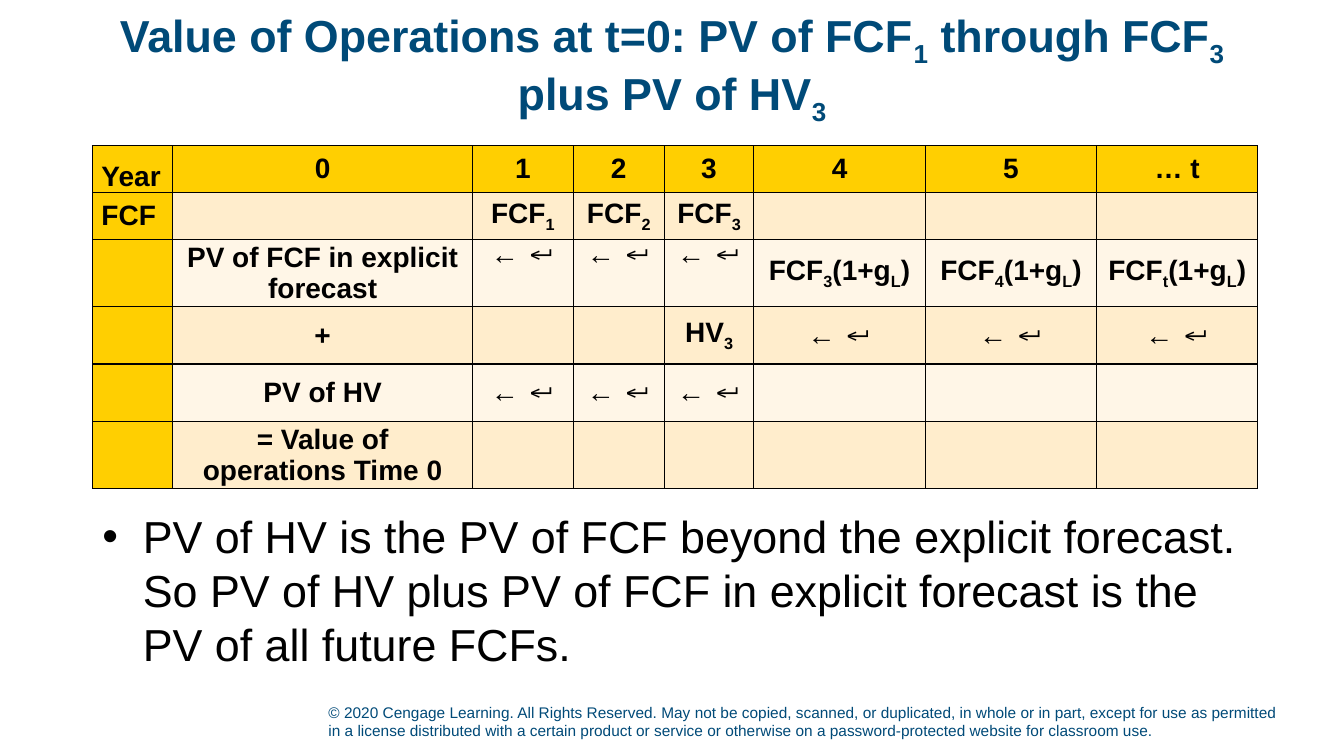
from dataclasses import dataclass

from lxml.etree import SubElement
from pptx import Presentation
from pptx.dml.color import RGBColor
from pptx.enum.text import MSO_ANCHOR, PP_ALIGN
from pptx.oxml.ns import qn
from pptx.util import Pt


@dataclass(frozen=True)
class Theme:
    font: str = "Arial"
    navy: str = "004A78"
    black: str = "000000"
    gold: str = "FFCF01"
    cream: str = "FFEDCC"
    ivory: str = "FFF6E7"
    heading_size: int = 32
    cell_size: int = 20
    legal_size: int = 11


class SlideBuilder:
    def __init__(self, slide, theme):
        self.slide = slide
        self.theme = theme

    def add_runs(self, paragraph, text, size, color, bold=False):
        """Add runs; the character after each underscore is a subscript."""
        first, *rest = text.split("_")
        pieces = [(first, False)]
        for part in rest:
            pieces += [(part[0], True), (part[1:], False)]
        for piece, lowered in pieces:
            if not piece:
                continue
            run = paragraph.add_run()
            run.text = piece
            run.font.name = self.theme.font
            run.font.size = Pt(size)
            run.font.bold = bold
            run.font.color.rgb = RGBColor.from_string(color)
            if lowered:
                run.font._element.set("baseline", "-25000")

    def text(self, box, text, size, color, bold=False, anchor=MSO_ANCHOR.TOP,
             align=PP_ALIGN.LEFT, line_spacing=None, hanging=0):
        frame = self.slide.shapes.add_textbox(*map(Pt, box)).text_frame
        frame.word_wrap = True
        frame.vertical_anchor = anchor
        paragraph = frame.paragraphs[0]
        paragraph.alignment = align
        if line_spacing:
            paragraph.line_spacing = line_spacing
        if hanging:
            properties = paragraph._p.get_or_add_pPr()
            properties.set("marL", str(Pt(hanging)))
            properties.set("indent", str(-Pt(hanging)))
            SubElement(properties, qn("a:buFont"), typeface=self.theme.font)
            SubElement(properties, qn("a:buChar"), char="•")
        self.add_runs(paragraph, text, size, color, bold)

    def border(self, cell):
        properties = cell._tc.get_or_add_tcPr()
        for index, side in enumerate(("lnL", "lnR", "lnT", "lnB")):
            line = SubElement(properties, qn(f"a:{side}"), w=str(Pt(1)))
            properties.insert(index, line)
            fill = SubElement(line, qn("a:solidFill"))
            SubElement(fill, qn("a:srgbClr"), val=self.theme.black)

    def table(self, left, top, widths, heights, rows):
        theme = self.theme
        table = self.slide.shapes.add_table(
            len(heights), len(widths), Pt(left), Pt(top),
            Pt(sum(widths)), Pt(sum(heights))).table
        for column, width in zip(table.columns, widths):
            column.width = Pt(width)
        for r, (height, texts) in enumerate(zip(heights, rows)):
            table.rows[r].height = Pt(height)
            for c, text in enumerate(texts):
                cell = table.cell(r, c)
                cell.margin_left = cell.margin_right = Pt(6.5)
                cell.margin_top = cell.margin_bottom = 0
                cell.vertical_anchor = MSO_ANCHOR.MIDDLE
                band = theme.cream if r % 2 else theme.ivory
                cell.fill.solid()
                cell.fill.fore_color.rgb = RGBColor.from_string(
                    theme.gold if r == 0 or c == 0 else band)
                self.border(cell)
                paragraph = cell.text_frame.paragraphs[0]
                paragraph.alignment = PP_ALIGN.CENTER if c else PP_ALIGN.LEFT
                self.add_runs(paragraph, text, theme.cell_size, theme.black, True)
        return table


def main():
    theme = Theme()
    deck = Presentation()
    deck.slide_width, deck.slide_height = Pt(960), Pt(540)
    builder = SlideBuilder(deck.slides.add_slide(deck.slide_layouts[6]), theme)

    # Copyright line
    builder.text(
        (227.5, 496, 693.5, 36),
        "© 2020 Cengage Learning. All Rights Reserved. May not be copied, "
        "scanned, or duplicated, in whole or in part, except for use as "
        "permitted in a license distributed with a certain product or service "
        "or otherwise on a password-protected website for classroom use.",
        theme.legal_size, theme.navy, anchor=MSO_ANCHOR.BOTTOM)

    # Title
    builder.text(
        (66, 11, 828, 72),
        "Value of Operations at t=0: PV of FCF_1 through FCF_3 plus PV of HV_3",
        theme.heading_size, theme.navy, bold=True, anchor=MSO_ANCHOR.MIDDLE,
        align=PP_ALIGN.CENTER, line_spacing=0.95)

    # Cash flow timeline
    back = "← ↵"
    timeline = builder.table(
        66, 104,
        [57.5, 214, 72, 65, 64, 122.5, 122.5, 115],
        [33.5] * 2 + [41] * 4,
        [
            ["Year", "0", "1", "2", "3", "4", "5", "… t"],
            ["FCF", "", "FCF_1", "FCF_2", "FCF_3", "", "", ""],
            ["", "PV of FCF in explicit forecast"] + [back] * 3
            + [f"FCF_{year}(1+g_L)" for year in "34t"],
            ["", "+", "", "", "HV_3"] + [back] * 3,
            ["", "PV of HV"] + [back] * 3 + [""] * 3,
            ["", "= Value of operations Time 0"] + [""] * 6,
        ])
    timeline.cell(0, 0).vertical_anchor = MSO_ANCHOR.BOTTOM
    for column in (2, 3, 4):
        timeline.cell(2, column).vertical_anchor = MSO_ANCHOR.TOP

    # Explanation
    builder.text(
        (66, 360, 828, 124.5),
        "PV of HV is the PV of FCF beyond the explicit forecast. So PV of HV "
        "plus PV of FCF in explicit forecast is the PV of all future FCFs.",
        theme.heading_size, theme.black, hanging=29)

    deck.save("out.pptx")


if __name__ == "__main__":
    main()
